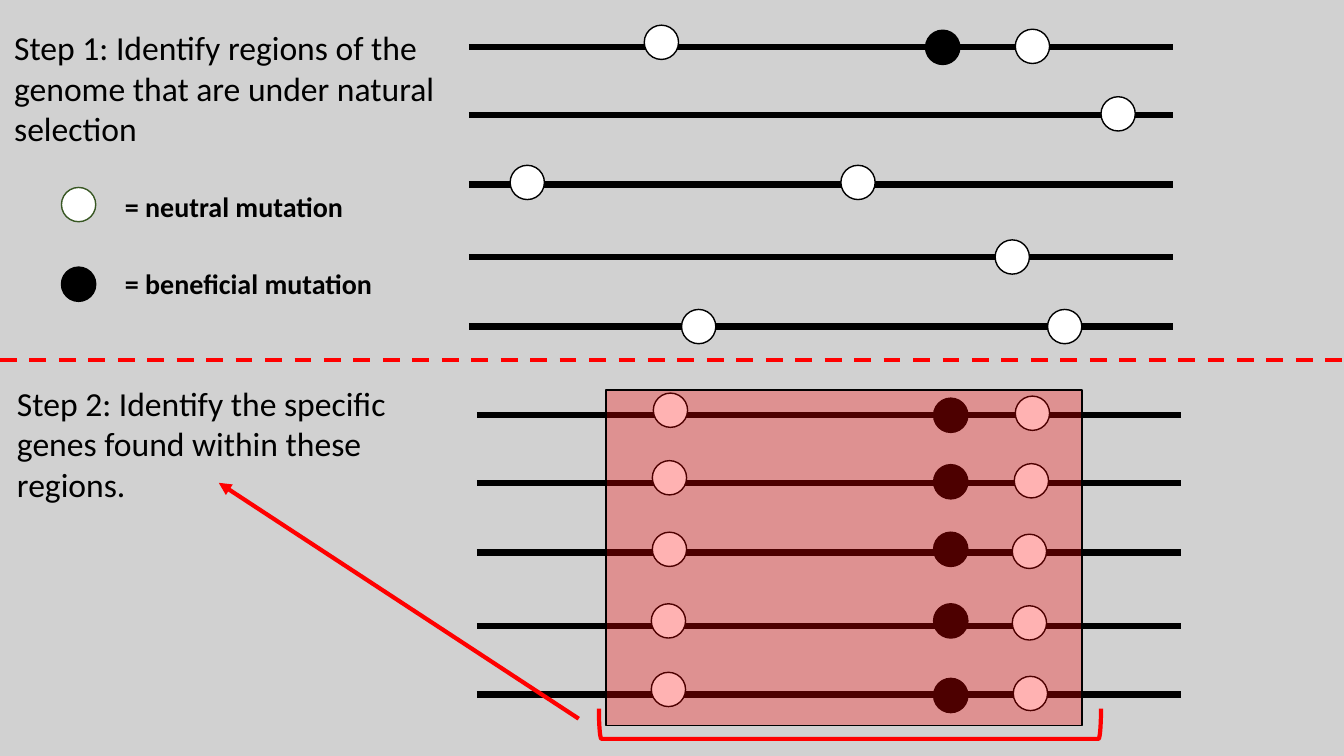
from lxml import etree
from pptx import Presentation
from pptx.dml.color import RGBColor
from pptx.enum.dml import MSO_LINE
from pptx.enum.shapes import MSO_CONNECTOR, MSO_SHAPE
from pptx.enum.text import MSO_ANCHOR, MSO_AUTO_SIZE, PP_ALIGN
from pptx.oxml.ns import qn
from pptx.util import Inches, Pt

COLORS = {
    "background": "D1D1D1",
    "strand": "000000",
    "neutral": "FFFFFF",
    "beneficial": "000000",
    "legend_outline": "385723",
    "highlight": "FF0000",
}
DOT = 0.34
STRAND_LENGTH = 6.98

# Each strand: its height, then (kind, left, top) of every mutation on it.
STEP_1_STRANDS = [
    (0.47, [("neutral", 6.39, 0.25), ("beneficial", 9.18, 0.3), ("neutral", 10.07, 0.29)]),
    (1.14, [("neutral", 10.92, 0.96)]),
    (1.83, [("neutral", 5.06, 1.64), ("neutral", 8.34, 1.64)]),
    (2.55, [("neutral", 9.87, 2.38)]),
    (3.24, [("neutral", 6.76, 3.07), ("neutral", 10.39, 3.07)]),
]
STEP_2_STRANDS = [
    (4.12, [("neutral", 6.48, 3.9), ("beneficial", 9.26, 3.95), ("neutral", 10.07, 3.93)]),
    (4.79, [("neutral", 6.47, 4.57), ("beneficial", 9.26, 4.61), ("neutral", 10.06, 4.6)]),
    (5.48, [("neutral", 6.47, 5.28), ("beneficial", 9.26, 5.28), ("neutral", 10.04, 5.3)]),
    (6.21, [("neutral", 6.46, 5.99), ("beneficial", 9.26, 5.99), ("neutral", 10.04, 6.01)]),
    (6.89, [("neutral", 6.46, 6.67), ("beneficial", 9.26, 6.73), ("neutral", 10.05, 6.71)]),
]
# Kind, outline colour, circle top, label top
LEGEND = [
    ("neutral", "legend_outline", 1.86, 1.83),
    ("beneficial", "strand", 2.65, 2.59),
]


def rgb(name):
    return RGBColor.from_string(COLORS[name])


def add_line(slide, start, end, color, width):
    points = [Inches(value) for value in (*start, *end)]
    line = slide.shapes.add_connector(MSO_CONNECTOR.STRAIGHT, *points)
    line.line.color.rgb = rgb(color)
    line.line.width = Pt(width)
    etree.SubElement(line._element.spPr, qn("a:effectLst"))
    return line


def add_outlined(slide, preset, box, outline, width, fill=None):
    shape = slide.shapes.add_shape(preset, *map(Inches, box))
    shape.shadow.inherit = False
    shape.line.color.rgb = rgb(outline)
    shape.line.width = Pt(width)
    if fill:
        shape.fill.solid()
        shape.fill.fore_color.rgb = rgb(fill)
    else:
        shape.fill.background()
    return shape


def add_mutation(slide, kind, left, top, outline="strand"):
    add_outlined(slide, MSO_SHAPE.OVAL, (left, top, DOT, DOT), outline, 1, kind)


def add_strands(slide, left, strands):
    for height, mutations in strands:
        add_line(slide, (left, height), (left + STRAND_LENGTH, height), "strand", 4.5)
        for mutation in mutations:
            add_mutation(slide, *mutation)


def write_text(holder, box, text, size, bold=False):
    """Place a text box or placeholder and fill it with one run."""
    holder.left, holder.top, holder.width, holder.height = map(Inches, box)
    frame = holder.text_frame
    frame.word_wrap = True
    frame.auto_size = MSO_AUTO_SIZE.SHAPE_TO_FIT_TEXT
    frame.vertical_anchor = MSO_ANCHOR.TOP
    paragraph = frame.paragraphs[0]
    paragraph.alignment = PP_ALIGN.LEFT
    paragraph.line_spacing = 1.0
    run = paragraph.add_run()
    run.text = text
    run.font.name = "Calibri"
    run.font.size = Pt(size)
    run.font.bold = bold
    run.font.color.rgb = rgb("strand")


def add_text(slide, box, text, size, bold=False):
    write_text(slide.shapes.add_textbox(*map(Inches, box)), box, text, size, bold)


def add_legend(slide):
    for kind, outline, dot_top, label_top in LEGEND:
        add_mutation(slide, kind, 0.61, dot_top, outline)
        add_text(slide, (1.14, label_top, 2.95, 0.44), f"= {kind} mutation", 20, bold=True)


def add_selected_region(slide):
    """Shade the shared region, bracket it and point to the step 2 text."""
    region = add_outlined(slide, MSO_SHAPE.RECTANGLE, (6.01, 3.87, 4.72, 3.33),
                          "strand", 1, "highlight")
    fill_color = region._element.spPr.find(qn("a:solidFill"))[0]
    etree.SubElement(fill_color, qn("a:alpha"), val="30000")

    bracket = add_outlined(slide, MSO_SHAPE.LEFT_BRACKET, (8.28, 4.69, 0.3, 4.98),
                           "highlight", 3)
    bracket.rotation = 270

    arrow = add_line(slide, (5.74, 7.13), (2.17, 4.79), "highlight", 3)
    etree.SubElement(arrow.line._get_or_add_ln(), qn("a:tailEnd"), type="triangle")


def main():
    deck = Presentation()
    deck.slide_width, deck.slide_height = Inches(13.33), Inches(7.5)
    slide = deck.slides.add_slide(deck.slide_layouts[5])
    slide.background.fill.solid()
    slide.background.fill.fore_color.rgb = rgb("background")

    write_text(slide.shapes.title, (0.04, 0.22, 4.42, 1.31),
               "Step 1: Identify regions of the genome that are under natural selection", 24)
    add_strands(slide, 4.65, STEP_1_STRANDS)
    add_legend(slide)

    divider = add_line(slide, (0, 3.57), (13.33, 3.57), "highlight", 3)
    divider.line.dash_style = MSO_LINE.DASH

    add_text(slide, (0.07, 3.75, 4.42, 1.31),
             "Step 2: Identify the specific genes found within these regions.", 24)
    add_strands(slide, 4.73, STEP_2_STRANDS)
    add_selected_region(slide)
    deck.save("out.pptx")


if __name__ == "__main__":
    main()
